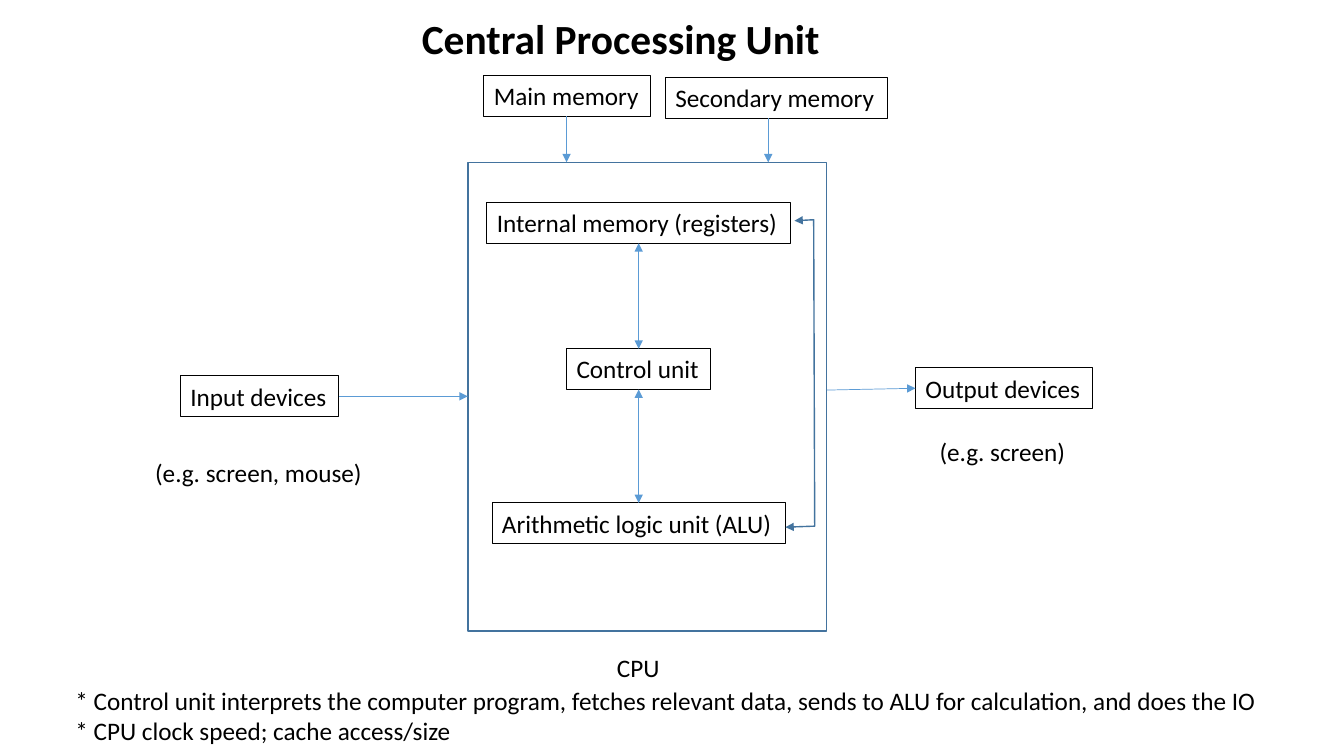
"""Build a one-slide block diagram of a central processing unit."""
import pptx
import pptx.util
import pptx.dml.color
import pptx.enum.shapes
import pptx.enum.text
import pptx.oxml.ns
from lxml import etree

COLUMNS, ROWS = 133.3, 75
COLORS = {"ink": "000000", "frame": "43739E", "arrow": "5B9BD5"}
FONT = "Calibri"
BOX_ROWS = 4.04
STACK = 63.35

TITLE = "Central Processing Unit"
FRAME = (46.4, 16.1, 35.6, 46.5)
BOXES = {
    "registers": ("Internal memory (registers)", STACK, 20.1, 30.1),
    "control": ("Control unit", STACK, 34.6, 14.3),
    "alu": ("Arithmetic logic unit (ALU)", STACK, 49.9, 29.1),
    "input": ("Input devices", 25.75, 37.3, 15.7),
    "output": ("Output devices", 99.6, 36.5, 17.6),
    "main": ("Main memory", 56.25, 7.5, 16.5),
    "secondary": ("Secondary memory", 77, 7.7, 22),
}
LABELS = [
    ("CPU", STACK, 64.2, 6.3),
    ("(e.g. screen, mouse)", 25.8, 44.9, 22.8),
    ("(e.g. screen)", 99.5, 42.8, 14.6),
]
NOTES = [
    "* Control unit interprets the computer program, fetches relevant data, "
    "sends to ALU for calculation, and does the IO",
    "* CPU clock speed; cache access/size",
]
FEEDBACK = [(77.9, 52.3), (80.8, 52.2), (80.7, 21.8), (78.8, 21.9)]

deck = pptx.Presentation()
deck.slide_width = pptx.util.Inches(13.33)
deck.slide_height = pptx.util.Inches(7.5)
page = deck.slides.add_slide(deck.slide_layouts[6])


def across(columns):
    """Turn grid columns into a length."""
    return round(deck.slide_width * columns / COLUMNS)


def down(rows):
    """Turn grid rows into a length."""
    return round(deck.slide_height * rows / ROWS)


def color(name):
    """Look up a named colour."""
    return pptx.dml.color.RGBColor.from_string(COLORS[name])


def draw_outline(item, name, width):
    """Give a shape or connector a plain line."""
    item.line.color.rgb = color(name)
    item.line.width = pptx.util.Pt(width)


def add_heads(item, *ends):
    """Put triangle arrowheads on the chosen ends."""
    line = item.line._get_or_add_ln()
    for end in ends:
        etree.SubElement(line, pptx.oxml.ns.qn(f"a:{end}"), type="triangle")


def add_text(lines, left, top, width, height=BOX_ROWS, size=18, bold=False,
             wrap=False, align="LEFT", anchor="TOP", spacing=None, border=False):
    """Place a text box with one paragraph for each line."""
    box = page.shapes.add_textbox(across(left), down(top), across(width), down(height))
    if border:
        draw_outline(box, "ink", 0.75)
    frame = box.text_frame
    frame.word_wrap = wrap
    frame.vertical_anchor = pptx.enum.text.MSO_ANCHOR[anchor]
    if not wrap:
        frame.auto_size = pptx.enum.text.MSO_AUTO_SIZE.SHAPE_TO_FIT_TEXT
    for index, line in enumerate(lines):
        para = frame.add_paragraph() if index else frame.paragraphs[0]
        para.alignment = pptx.enum.text.PP_ALIGN[align]
        para.line_spacing = spacing
        span = para.add_run()
        span.text = line
        span.font.name = FONT
        span.font.size = pptx.util.Pt(size)
        span.font.bold = bold
        span.font.color.rgb = color("ink")


def add_arrow(start, finish, both=False):
    """Connect two grid points with an arrow."""
    arrow = page.shapes.add_connector(
        pptx.enum.shapes.MSO_CONNECTOR.STRAIGHT,
        across(start[0]), down(start[1]), across(finish[0]), down(finish[1]))
    draw_outline(arrow, "arrow", 0.5)
    add_heads(arrow, *(["headEnd"] if both else []), "tailEnd")
    etree.SubElement(arrow._element.spPr, pptx.oxml.ns.qn("a:effectLst"))


def add_feedback():
    """Draw the two-headed path between the ALU and the registers."""
    points = [(across(column), down(row)) for column, row in FEEDBACK]
    builder = page.shapes.build_freeform(*points[0])
    builder.add_line_segments(points[1:], close=False)
    path = builder.convert_to_shape()
    path.shadow.inherit = False
    path.fill.background()
    draw_outline(path, "frame", 1)
    add_heads(path, "headEnd", "tailEnd")


def main():
    """Assemble the slide and save it."""
    add_text([TITLE], 29.1, 1.7, 65, 5, size=29.6, bold=True, wrap=True,
             align="CENTER", anchor="BOTTOM", spacing=0.8)

    left, top, width, height = FRAME
    frame = page.shapes.add_shape(
        pptx.enum.shapes.MSO_SHAPE.RECTANGLE,
        across(left), down(top), across(width), down(height))
    frame.shadow.inherit = False
    frame.fill.background()
    draw_outline(frame, "frame", 1)

    for text, center, row, columns in BOXES.values():
        add_text([text], center - columns / 2, row, columns, border=True)
    for text, center, row, columns in LABELS:
        add_text([text], center - columns / 2, row, columns)
    add_text(NOTES, 6.5, 67.5, 120, 7.1)

    for upper, lower in (("registers", "control"), ("control", "alu")):
        add_arrow((STACK, BOXES[upper][2] + BOX_ROWS), (STACK, BOXES[lower][2]), both=True)
    for name, column in (("main", 56.2), ("secondary", 76.2)):
        add_arrow((column, BOXES[name][2] + BOX_ROWS), (column, top))
    _, center, row, columns = BOXES["input"]
    add_arrow((center + columns / 2, row + BOX_ROWS / 2), (left, row + BOX_ROWS / 2))
    _, center, row, columns = BOXES["output"]
    add_arrow((left + width, 38.7), (center - columns / 2, row + BOX_ROWS / 2))
    add_feedback()
    deck.save("out.pptx")


if __name__ == "__main__":
    main()
